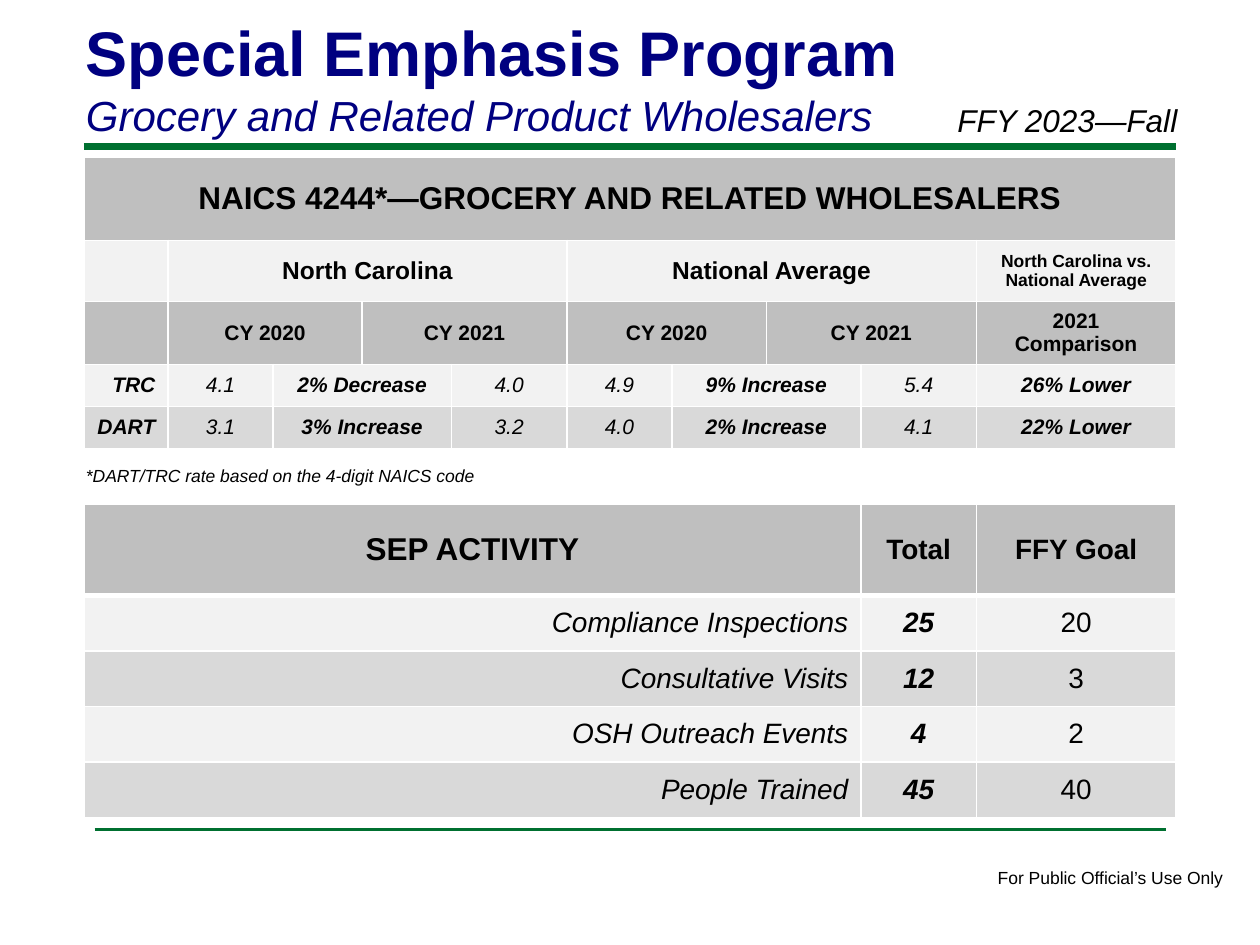
from dataclasses import dataclass
from itertools import accumulate

from lxml.etree import SubElement
from pptx import Presentation
from pptx.dml.color import RGBColor as Color
from pptx.enum.shapes import MSO_CONNECTOR as Connector
from pptx.enum.text import MSO_ANCHOR as Anchor, MSO_AUTO_SIZE as AutoSize, PP_ALIGN as Align
from pptx.oxml import parse_xml
from pptx.oxml.ns import nsdecls, qn
from pptx.util import Inches, Pt


@dataclass(frozen=True)
class Theme:
    """Colours, font and type sizes of the deck."""
    font: str = "Arial"
    ink: str = "000000"
    navy: str = "000080"
    green: str = "007030"
    white: str = "FFFFFF"
    head: str = "BFBFBF"
    light: str = "F2F2F2"
    dark: str = "D9D9D9"
    title: int = 36
    subtitle: int = 24
    heading: int = 18
    large: int = 16
    group: int = 14
    body: int = 12
    small: int = 10


@dataclass(frozen=True)
class Box:
    """An area in columns and rows of the page grid."""
    left: float
    top: float
    width: float
    height: float

    def emu(self):
        """Return the area as slide lengths."""
        return [grid(n) for n in (self.left, self.top, self.width, self.height)]


@dataclass(frozen=True)
class Entry:
    """Text of a table cell, its look and the columns it spans."""
    text: str
    size: int
    bold: bool = True
    italic: bool = False
    span: int = 1
    align: Align = Align.CENTER


THEME = Theme()
COLUMNS, ROWS = 120, 90


def grid(count):
    """Return the length of a count of grid units, twelve to the inch."""
    return Inches(count / 12)


def add_span(para, text, size, color=THEME.ink, bold=False, italic=False):
    """Add one run to a paragraph."""
    span = para.add_run()
    span.text = text
    font = span.font
    font.name, font.size, font.bold, font.italic = THEME.font, Pt(size), bold, italic
    font.color.rgb = Color.from_string(color)


def add_text(page, box, lines, wrap=True):
    """Place a text box holding one run per line."""
    frame = page.shapes.add_textbox(*box.emu()).text_frame
    frame.word_wrap = wrap
    frame.auto_size = AutoSize.SHAPE_TO_FIT_TEXT
    for index, line in enumerate(lines):
        para = frame.add_paragraph() if index else frame.paragraphs[0]
        add_span(para, **line)


def add_rule(page, box, width):
    """Draw a green rule along the top of a box."""
    left, top, length, _ = box.emu()
    rule = page.shapes.add_connector(Connector.STRAIGHT, left, top, left + length, top)
    rule.line.color.rgb = Color.from_string(THEME.green)
    rule.line.width = Pt(width)
    SubElement(rule._element.spPr, qn("a:effectLst"))


def style_cell(cell, fill, top, bottom):
    """Fill a cell and give it white borders."""
    cell.vertical_anchor = Anchor.MIDDLE
    cell.fill.solid()
    cell.fill.fore_color.rgb = Color.from_string(fill)
    properties = cell._tc.get_or_add_tcPr()
    for index, (side, width) in enumerate(zip("LRTB", (1, 1, top, bottom))):
        properties.insert(index, parse_xml(
            f'<a:ln{side} {nsdecls("a")} w="{Pt(width)}"><a:solidFill>'
            f'<a:srgbClr val="{THEME.white}"/></a:solidFill></a:ln{side}>'))


def add_grid_table(page, box, widths, heights, fills, entries, head_line=1):
    """Place a table whose entries may span several columns."""
    table = page.shapes.add_table(len(heights), len(widths), *box.emu()).table
    table.first_row = table.horz_banding = False
    for column, width in zip(table.columns, widths):
        column.width = grid(width)
    for number, (height, fill, line) in enumerate(zip(heights, fills, entries)):
        table.rows[number].height = grid(height)
        for column in range(len(widths)):
            style_cell(table.cell(number, column), fill,
                       head_line if number == 1 else 1, head_line if number == 0 else 1)
        starts = accumulate((entry.span for entry in line), initial=0)
        for start, entry in zip(starts, line):
            cell = table.cell(number, start)
            if entry.span > 1:
                cell.merge(table.cell(number, start + entry.span - 1))
            if entry.text:
                para = cell.text_frame.paragraphs[0]
                para.alignment = entry.align
                add_span(para, entry.text, entry.size, bold=entry.bold, italic=entry.italic)


def add_header(page, box):
    """Place the title, subtitle, season and the rule below them."""
    add_rule(page, Box(box.left, box.top + box.height, box.width, 0), 4)
    add_text(page, Box(box.left - 1, box.top, 99, box.height), [
        dict(text="Special Emphasis Program", size=THEME.title, color=THEME.navy, bold=True),
        dict(text="Grocery and Related Product Wholesalers", size=THEME.subtitle,
             color=THEME.navy, italic=True)])
    add_text(page, Box(90, box.top + box.height - 5, 30, 4.8),
             [dict(text="FFY 2023—Fall", size=THEME.heading, italic=True)])


def add_rates(page, box):
    """Place the table of injury rates and its note."""
    body = THEME.body

    def rate_line(name, state, nation, comparison):
        """Return one row of rates."""
        line = [Entry(name, body, italic=True, align=Align.RIGHT)]
        for before, change, after in (state, nation):
            line += [Entry(before, body, False, True), Entry(change, body, True, True, 2),
                     Entry(after, body, False, True)]
        return line + [Entry(comparison, body, True, True)]

    entries = [
        [Entry("NAICS 4244*—GROCERY AND RELATED WHOLESALERS", THEME.heading, span=10)],
        [Entry("", body)]
        + [Entry(name, THEME.group, span=4) for name in ("North Carolina", "National Average")]
        + [Entry("North Carolina vs. National Average", THEME.small)],
        [Entry("", body)]
        + [Entry(year, body, span=2) for year in ("CY 2020", "CY 2021") * 2]
        + [Entry("2021 Comparison", body)],
        rate_line("TRC", ("4.1", "2% Decrease", "4.0"), ("4.9", "9% Increase", "5.4"), "26% Lower"),
        rate_line("DART", ("3.1", "3% Increase", "3.2"), ("4.0", "2% Increase", "4.1"), "22% Lower"),
    ]
    add_grid_table(page, box, [8, 10, 8.5, 8.5, 11, 10, 9, 9, 11, 19], [7.9, 5.8, 5.9, 4, 4],
                   [THEME.head, THEME.light, THEME.head, THEME.light, THEME.dark], entries)
    add_text(page, Box(box.left - 1, box.top + box.height + 1.1, 40.4, 3.2),
             [dict(text="*DART/TRC rate based on the 4-digit NAICS code",
                   size=THEME.small, italic=True)])


def add_activity(page, box):
    """Place the table of program activity."""
    size = THEME.large
    activity = [("Compliance Inspections", "25", "20"), ("Consultative Visits", "12", "3"),
                ("OSH Outreach Events", "4", "2"), ("People Trained", "45", "40")]
    entries = [[Entry("SEP ACTIVITY", THEME.heading), Entry("Total", size), Entry("FFY Goal", size)]]
    entries += [[Entry(name, size, False, True, align=Align.RIGHT), Entry(total, size, True, True),
                 Entry(goal, size, False)] for name, total, goal in activity]
    add_grid_table(page, box, [74, 11, 19], [8.7] + [5.3] * 4,
                   [THEME.head] + [THEME.light, THEME.dark] * 2, entries, head_line=3)


def add_footer(page, box):
    """Place the closing rule and the notice."""
    add_rule(page, box, 2)
    add_text(page, Box(93.84, box.top + 3, 24.12, 3.2),
             [dict(text="For Public Official’s Use Only", size=THEME.small)], wrap=False)


def main():
    """Build the slide and save the deck."""
    deck = Presentation()
    deck.slide_width, deck.slide_height = grid(COLUMNS), grid(ROWS)
    page = deck.slides.add_slide(deck.slide_layouts[6])
    add_header(page, Box(8, 0.72, 104, 13.28))
    add_rates(page, Box(8, 15, 104, 27.6))
    add_activity(page, Box(8, 48, 104, 29.9))
    add_footer(page, Box(9, 79, 102, 6))
    deck.save("out.pptx")


if __name__ == "__main__":
    main()
